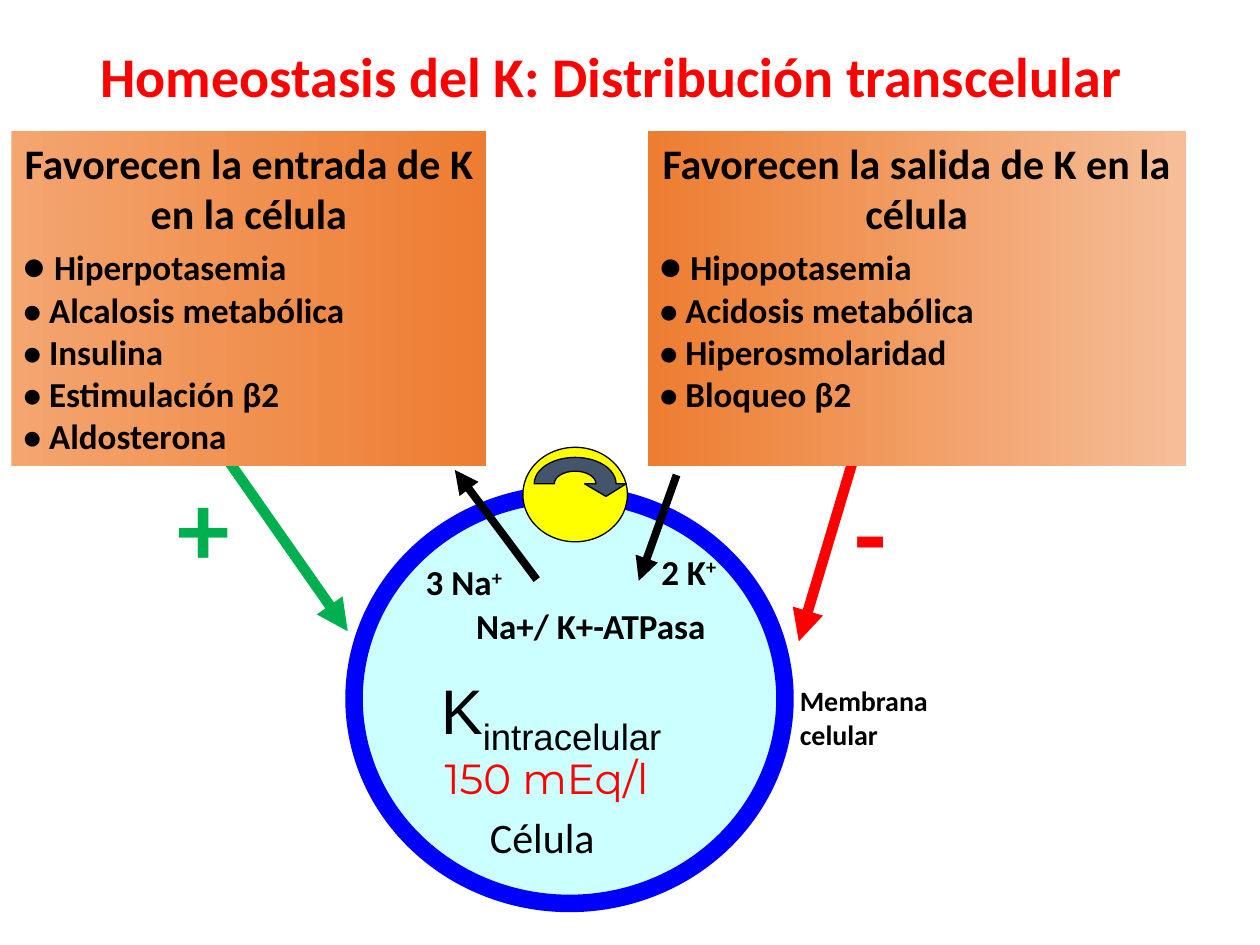
from dataclasses import dataclass
from math import cos, pi, sin
from typing import NamedTuple

from lxml import etree
from pptx import Presentation, util as u
from pptx.dml.color import RGBColor
from pptx.enum import shapes as sh, text as tx
from pptx.oxml import ns

CELL = 0.1  # inches per grid column and row: 100 columns by 75 rows
BLACK, RED, GREEN, BLUE = "000000", "FF0000", "00B050", "0000FF"
ORANGE = "ED7D31"


class Box(NamedTuple):
    col: float
    row: float
    wide: float
    high: float


class Run(NamedTuple):
    text: str
    size: float
    base: int = 0  # percent; positive is superscript


@dataclass
class Label:
    box: Box
    lines: list[list[Run]]
    color: str = BLACK
    bold: bool = True
    font: str = "Calibri"
    wrap: bool = False


@dataclass
class Arrow:
    start: tuple[float, float]
    end: tuple[float, float]
    color: str
    width: float


@dataclass
class Panel:
    box: Box
    head: str
    items: list[str]
    left: str
    right: str


def grid(val: float) -> int:
    return u.Inches(val * CELL)


def tint(code: str) -> RGBColor:
    return RGBColor.from_string(code)


def apply(obj, vals: dict) -> None:
    for key, val in vals.items():
        setattr(obj, key, val)


def paint(shape, fill: str, line: str, width: float) -> None:
    shape.shadow.inherit = False
    shape.fill.solid()
    shape.fill.fore_color.rgb = tint(fill)
    shape.line.color.rgb = tint(line)
    shape.line.width = u.Pt(width)


def add_oval(slide, box: Box, fill: str, line: str, width: float) -> None:
    oval = slide.shapes.add_shape(sh.MSO_SHAPE.OVAL, *map(grid, box))
    paint(oval, fill, line, width)


def add_turn(slide) -> None:
    """Draw the half-ring arrow of the pump."""
    mid, base, steps = 45.65, 38.4, 24

    def arc(wide: float, high: float) -> list[tuple[float, float]]:
        turns = [pi * i / steps for i in range(steps + 1)]
        return [(mid + wide * cos(t), base - high * sin(t)) for t in turns]

    head = [(49.7, base), (48.1, 39.4), (46.4, base)]
    dots = arc(1.65, 1) + arc(3.25, 2.1)[::-1] + head
    pen = slide.shapes.build_freeform(*map(grid, dots[0]), scale=1.0)
    pen.add_line_segments([(grid(x), grid(y)) for x, y in dots[1:]], close=True)
    paint(pen.convert_to_shape(), "44546A", BLACK, 0.75)


def add_arrow(slide, arrow: Arrow) -> None:
    ends = map(grid, arrow.start + arrow.end)
    link = slide.shapes.add_connector(sh.MSO_CONNECTOR.STRAIGHT, *ends)
    link.line.color.rgb = tint(arrow.color)
    link.line.width = u.Pt(arrow.width)
    tail = etree.SubElement(link.line._get_or_add_ln(), ns.qn("a:tailEnd"))
    tail.set("type", "triangle")
    etree.SubElement(link._element.spPr, ns.qn("a:effectLst"))


def write(para, runs: list[Run], color: str = BLACK, bold: bool = True,
          font: str = "Calibri") -> None:
    for part in runs:
        run = para.add_run()
        run.text = part.text
        apply(run.font, {"name": font, "size": u.Pt(part.size), "bold": bold})
        run.font.color.rgb = tint(color)
        if part.base:
            run.font._element.set("baseline", str(part.base * 1000))


def fill_text(frame, lines: list[list[Run]], **style) -> None:
    for i, runs in enumerate(lines):
        para = frame.add_paragraph() if i else frame.paragraphs[0]
        para.alignment = tx.PP_ALIGN.LEFT
        write(para, runs, **style)


def add_label(slide, label: Label):
    frame = slide.shapes.add_textbox(*map(grid, label.box)).text_frame
    apply(frame, {"word_wrap": label.wrap,
                  "auto_size": tx.MSO_AUTO_SIZE.SHAPE_TO_FIT_TEXT})
    fill_text(frame, label.lines, color=label.color, bold=label.bold,
              font=label.font)
    return frame


def add_title(slide) -> None:
    name = "Homeostasis del K: Distribución transcelular"
    frame = add_label(slide, Label(Box(7, 0.1, 96.7, 14), [[Run(name, 32)]],
                                   RED, wrap=True))
    apply(frame, {"auto_size": tx.MSO_AUTO_SIZE.NONE,
                  "vertical_anchor": tx.MSO_ANCHOR.BOTTOM,
                  "margin_bottom": grid(5.4)})
    frame.paragraphs[0].line_spacing = 0.9


def add_panel(slide, panel: Panel) -> None:
    rect = slide.shapes.add_shape(sh.MSO_SHAPE.RECTANGLE, *map(grid, panel.box))
    rect.shadow.inherit = False
    rect.line.fill.background()
    rect.fill.gradient()
    rect.fill.gradient_angle = 0
    for i, code in enumerate((panel.left, panel.right)):
        stop = rect.fill.gradient_stops[i]
        stop.color.rgb = tint(code)
        stop.position = i
    lines = [[Run(panel.head, 24)]]
    for i, item in enumerate(panel.items):
        lines.append([Run("• ", 20 if i else 24), Run(item, 20)])
    frame = rect.text_frame
    apply(frame, {"word_wrap": True, "vertical_anchor": tx.MSO_ANCHOR.TOP})
    fill_text(frame, lines)
    frame.paragraphs[0].alignment = tx.PP_ALIGN.CENTER


ARROWS = [
    Arrow((42.6, 46), (36.1, 37.3), BLACK, 4.5),
    Arrow((53.7, 37.7), (50.7, 46.1), BLACK, 4.5),
    Arrow((17.1, 35.1), (27.6, 50.1), GREEN, 6),
    Arrow((68.4, 34.2), (63.4, 50.9), RED, 6),
]
LABELS = [
    Label(Box(32.8, 44, 8.5, 4.3), [[Run("3 Na", 20), Run("+", 20, 30)]]),
    Label(Box(51.5, 43.2, 6.5, 4.4), [[Run("2 K", 20), Run("+", 20, 30)]]),
    Label(Box(13.1, 36.1, 6.2, 11.1), [[Run("+", 60)]], GREEN),
    Label(Box(66.8, 36.6, 4.6, 11.1), [[Run("-", 60)]], RED),
    Label(Box(37.9, 63.9, 10.7, 5), [[Run("Célula", 24)]], bold=False),
    Label(Box(62.5, 53.8, 12.6, 6.4), [[Run("Membrana", 16)], [Run("celular", 16)]]),
    Label(Box(34.3, 59.2, 19.8, 5), [[Run("150 mEq/l", 24)]], RED, False, "Montserrat"),
    Label(Box(34, 52.8, 25, 7), [[Run("K", 36), Run("intracelular", 36, -25)]],
          bold=False, font="Arial", wrap=True),
    Label(Box(36.8, 47.5, 20.2, 4.4), [[Run("Na+/ K+-ATPasa", 20)]]),
]
PANELS = [
    Panel(Box(0.9, 10.4, 37.7, 26.6), "Favorecen la entrada de K en la célula",
          ["Hiperpotasemia", "Alcalosis metabólica", "Insulina",
           "Estimulación β2", "Aldosterona"], "F4A570", ORANGE),
    Panel(Box(51.4, 10.4, 42.7, 26.6), "Favorecen la salida de K en la célula",
          ["Hipopotasemia", "Acidosis metabólica", "Hiperosmolaridad",
           "Bloqueo β2"], ORANGE, "F6BE98"),
]


def main() -> None:
    deck = Presentation()
    apply(deck, {"slide_width": grid(100), "slide_height": grid(75)})
    slide = deck.slides.add_slide(deck.slide_layouts[6])
    add_oval(slide, Box(28.1, 39.2, 34.2, 32.5), "CCFFFF", BLUE, 10)
    add_oval(slide, Box(41.5, 35.5, 8.3, 7.5), "FFFF00", BLACK, 0.75)
    add_turn(slide)
    for draw, parts in ((add_arrow, ARROWS), (add_panel, PANELS), (add_label, LABELS)):
        for part in parts:
            draw(slide, part)
    add_title(slide)
    deck.save("out.pptx")


if __name__ == "__main__":
    main()
